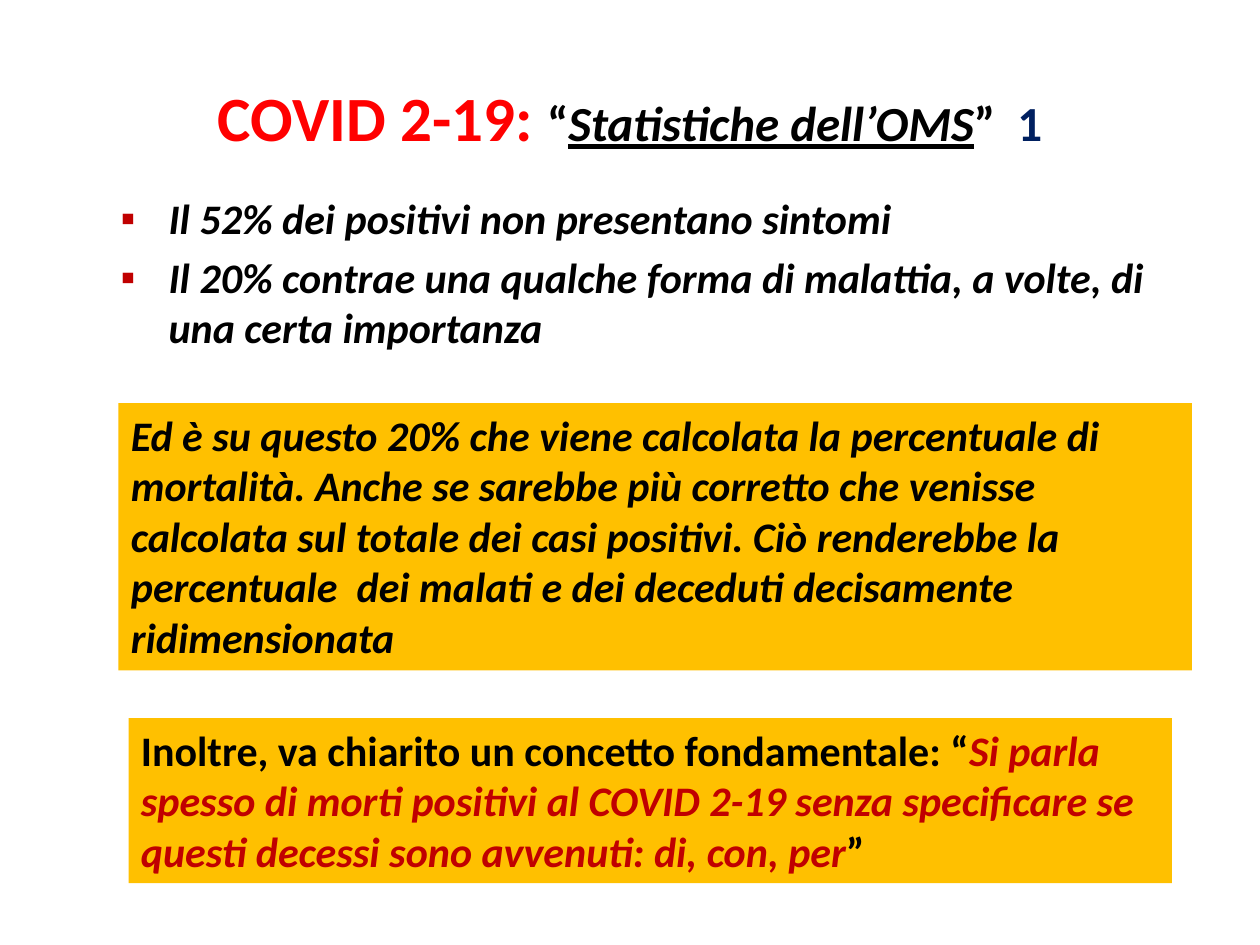
from dataclasses import dataclass
from typing import Optional

import pptx
import pptx.dml.color
import pptx.enum.shapes
import pptx.enum.text
import pptx.util
from lxml import etree
from pptx.util import Inches

RGB = pptx.dml.color.RGBColor.from_string
ALIGN = pptx.enum.text.PP_ALIGN
ANCHOR = pptx.enum.text.MSO_ANCHOR
NS = "http://schemas.openxmlformats.org/drawingml/2006/main"


@dataclass(frozen=True)
class Theme:
    font: str = "Calibri"
    black: str = "000000"
    red: str = "FF0000"
    dark_red: str = "C00000"
    navy: str = "002060"
    amber: str = "FFC000"
    title: float = 36
    subtitle: float = 28
    body: float = 24
    bullet_gap: float = 4.8
    bullet_indent: float = 0.38


T = Theme()


@dataclass(frozen=True)
class Run:
    text: str
    size: float = T.body
    color: str = T.black
    italic: bool = False
    underline: bool = False


@dataclass(frozen=True)
class Block:
    left: float
    top: float
    width: float
    height: float
    paragraphs: list[list[Run]]
    fill: Optional[str] = None
    bulleted: bool = False
    align: ALIGN = ALIGN.LEFT
    anchor: ANCHOR = ANCHOR.TOP


def add_bullet(p) -> None:
    """Give a paragraph a coloured square bullet with a hanging indent."""
    p.space_before = pptx.util.Pt(T.bullet_gap)
    pPr = p._p.get_or_add_pPr()
    indent = Inches(T.bullet_indent)
    pPr.set("marL", str(indent))
    pPr.set("indent", str(-indent))
    color = etree.SubElement(pPr, f"{{{NS}}}buClr")
    etree.SubElement(color, f"{{{NS}}}srgbClr", val=T.dark_red)
    etree.SubElement(pPr, f"{{{NS}}}buFont", typeface="Arial")
    etree.SubElement(pPr, f"{{{NS}}}buChar", char="▪")


def add_run(p, run: Run) -> None:
    r = p.add_run()
    r.text = run.text
    r.font.name = T.font
    r.font.size = pptx.util.Pt(run.size)
    r.font.bold = True
    r.font.italic = run.italic
    r.font.underline = run.underline
    r.font.color.rgb = RGB(run.color)


def add_block(s, block: Block) -> None:
    box = [Inches(v) for v in (block.left, block.top, block.width, block.height)]
    if block.fill:
        sp = s.shapes.add_shape(pptx.enum.shapes.MSO_SHAPE.RECTANGLE, *box)
        sp.shadow.inherit = False
        sp.fill.solid()
        sp.fill.fore_color.rgb = RGB(block.fill)
        sp.line.fill.background()
    else:
        sp = s.shapes.add_textbox(*box)
    tf = sp.text_frame
    tf.word_wrap = True
    tf.vertical_anchor = block.anchor
    for i, runs in enumerate(block.paragraphs):
        p = tf.add_paragraph() if i else tf.paragraphs[0]
        p.alignment = block.align
        if block.bulleted:
            add_bullet(p)
        for run in runs:
            add_run(p, run)


BLOCKS = [
    # Title
    Block(0.5, 0.3, 9, 1.25, [[
        Run("COVID 2-19: ", T.title, T.red),
        Run("“", T.subtitle),
        Run("Statistiche dell’OMS", T.subtitle, italic=True, underline=True),
        Run("”  ", T.subtitle),
        Run("1", T.subtitle, T.navy),
    ]], align=ALIGN.CENTER, anchor=ANCHOR.MIDDLE),
    # Bulleted statistics
    Block(0.86, 1.48, 8.64, 1.45, [
        [Run("Il 52% dei positivi non presentano sintomi", italic=True)],
        [Run("Il 20% contrae una qualche forma di malattia, a volte, di "
             "una certa importanza", italic=True)],
    ], bulleted=True),
    # Highlighted remarks
    Block(0.94, 3.2, 8.52, 2.12, [[
        Run("Ed è su questo 20% che viene calcolata la percentuale di "
            "mortalità. Anche se sarebbe più corretto che venisse calcolata "
            "sul totale dei casi positivi. Ciò renderebbe la percentuale  dei "
            "malati e dei deceduti decisamente ridimensionata", italic=True),
    ]], fill=T.amber),
    Block(1.02, 5.7, 8.28, 1.31, [[
        Run("Inoltre, va chiarito un concetto fondamentale: “"),
        Run("Si parla spesso di morti positivi al COVID 2-19 senza "
            "specificare se questi decessi sono avvenuti: di, con, per",
            color=T.dark_red, italic=True),
        Run("”"),
    ]], fill=T.amber),
]


def main() -> None:
    prs = pptx.Presentation()
    prs.slide_width, prs.slide_height = Inches(10), Inches(7.5)
    s = prs.slides.add_slide(prs.slide_layouts[6])
    for block in BLOCKS:
        add_block(s, block)
    prs.save("out.pptx")


if __name__ == "__main__":
    main()
